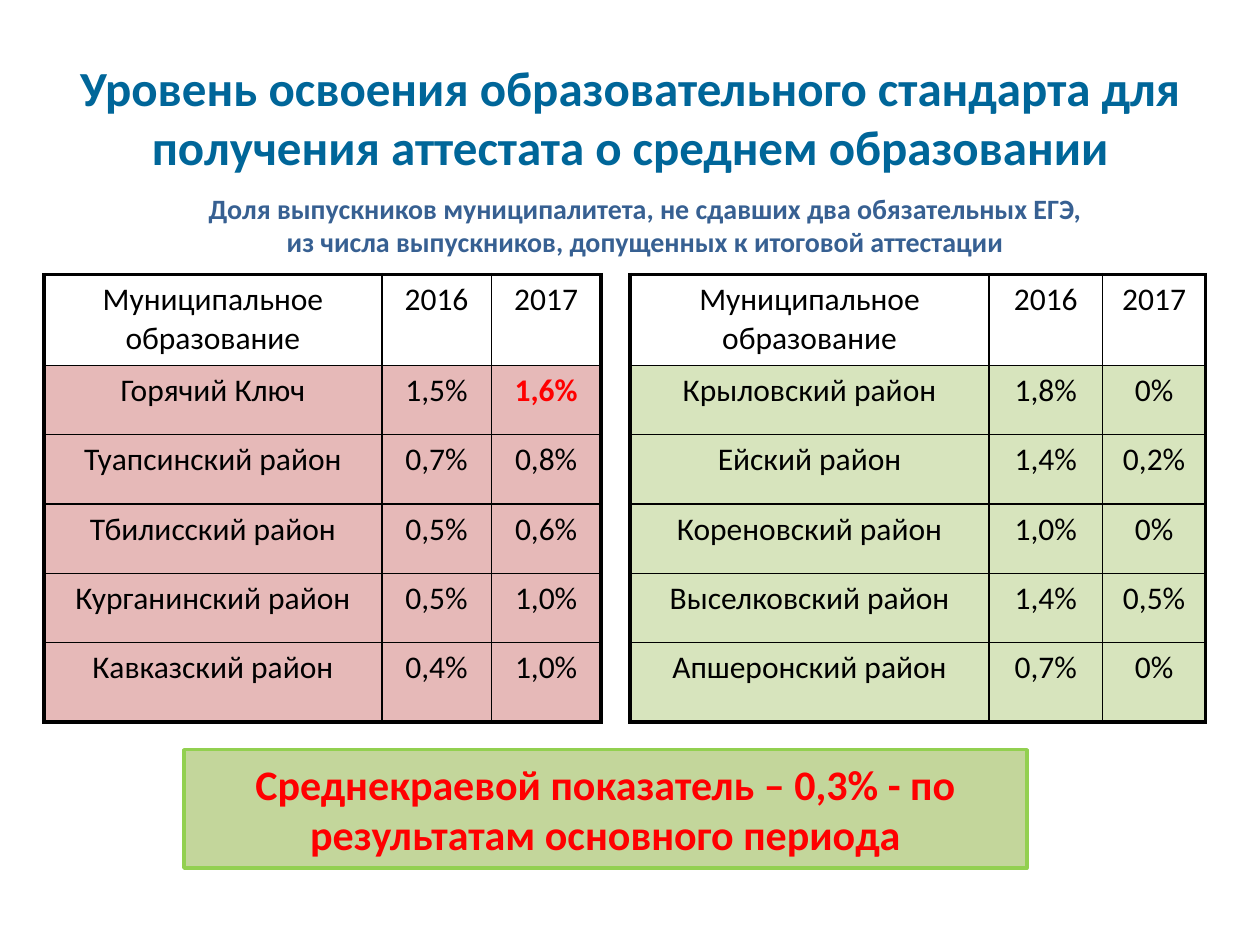
from dataclasses import dataclass

from lxml import etree
from pptx import Presentation
from pptx.dml.color import RGBColor
from pptx.enum.shapes import MSO_SHAPE
from pptx.enum.text import MSO_ANCHOR, PP_ALIGN
from pptx.oxml.ns import qn
from pptx.util import Inches, Pt

CENTER = PP_ALIGN.CENTER
TOP = MSO_ANCHOR.TOP
MIDDLE = MSO_ANCHOR.MIDDLE
RECTANGLE = MSO_SHAPE.RECTANGLE

FONT_NAME = "Calibri"
COLORS = {
    "title": "006699",
    "subtitle": "376092",
    "text": "000000",
    "alert": "FF0000",
    "border": "000000",
    "worse": "E6B9B8",
    "better": "D7E4BD",
    "summary_fill": "C3D69B",
    "summary_line": "92D050",
}
HEADER = ("Муниципальное образование", "2016", "2017")
ROW_HEIGHTS = (0.72, 0.55, 0.55, 0.55, 0.55, 0.63)
TABLE_TOP = 2.18
OUTER_BORDER, INNER_BORDER = 2.25, 1


@dataclass
class Box:
    left: float
    top: float
    width: float
    height: float

    def lengths(self) -> tuple:
        return tuple(Inches(v) for v in (self.left, self.top, self.width, self.height))


@dataclass
class TextStyle:
    size: float
    color: str
    bold: bool = False


@dataclass
class ResultTable:
    left: float
    columns: tuple
    fill: str
    rows: tuple
    alerts: tuple = ()


CELL_STYLE = TextStyle(18, "text")
ALERT_STYLE = TextStyle(18, "alert", True)

TABLES = (
    ResultTable(0.35, (2.68, 0.87, 0.87), "worse", (
        ("Горячий Ключ", "1,5%", "1,6%"),
        ("Туапсинский район", "0,7%", "0,8%"),
        ("Тбилисский район", "0,5%", "0,6%"),
        ("Курганинский район", "0,5%", "1,0%"),
        ("Кавказский район", "0,4%", "1,0%"),
    ), alerts=("1,6%",)),
    ResultTable(5, (2.85, 0.9, 0.82), "better", (
        ("Крыловский район", "1,8%", "0%"),
        ("Ейский район", "1,4%", "0,2%"),
        ("Кореновский район", "1,0%", "0%"),
        ("Выселковский район", "1,4%", "0,5%"),
        ("Апшеронский район", "0,7%", "0%"),
    )),
)


def color(name: str) -> RGBColor:
    return RGBColor.from_string(COLORS[name])


def write_text(frame, lines: tuple, style: TextStyle, anchor=TOP) -> None:
    frame.word_wrap = True
    frame.vertical_anchor = anchor
    font_values = {"name": FONT_NAME, "size": Pt(style.size), "bold": style.bold}
    for index, line in enumerate(lines):
        paragraph = frame.add_paragraph() if index else frame.paragraphs[0]
        paragraph.alignment = CENTER
        run = paragraph.add_run()
        run.text = line
        for name, value in font_values.items():
            setattr(run.font, name, value)
        run.font.color.rgb = color(style.color)


def add_text(slide, box: Box, lines: tuple, style: TextStyle, anchor=TOP) -> None:
    shape = slide.shapes.add_textbox(*box.lengths())
    write_text(shape.text_frame, lines, style, anchor)


def set_borders(cell, widths: dict) -> None:
    properties = cell._tc.get_or_add_tcPr()
    for side, width in widths.items():
        line = etree.SubElement(properties, qn(f"a:ln{side}"), w=str(Pt(width)))
        fill = etree.SubElement(line, qn("a:solidFill"))
        etree.SubElement(fill, qn("a:srgbClr"), val=COLORS["border"])


def add_result_table(slide, data: ResultTable) -> None:
    rows = (HEADER, *data.rows)
    last_row, last_column = len(rows) - 1, len(data.columns) - 1
    box = Box(data.left, TABLE_TOP, sum(data.columns), sum(ROW_HEIGHTS))
    table = slide.shapes.add_table(len(rows), len(data.columns), *box.lengths()).table
    for column, width in zip(table.columns, data.columns):
        column.width = Inches(width)
    for row, height in zip(table.rows, ROW_HEIGHTS):
        row.height = Inches(height)

    for r, values in enumerate(rows):
        for c, value in enumerate(values):
            cell = table.cell(r, c)
            outer_sides = {"L": c == 0, "R": c == last_column,
                           "T": r == 0, "B": r == last_row}
            set_borders(cell, {side: OUTER_BORDER if outer else INNER_BORDER
                               for side, outer in outer_sides.items()})
            if r == 0:
                cell.fill.background()
            else:
                cell.fill.solid()
                cell.fill.fore_color.rgb = color(data.fill)
            style = ALERT_STYLE if value in data.alerts else CELL_STYLE
            write_text(cell.text_frame, (value,), style)


def add_summary(slide, box: Box, text: str) -> None:
    shape = slide.shapes.add_shape(RECTANGLE, *box.lengths())
    shape.shadow.inherit = False
    shape.fill.solid()
    shape.fill.fore_color.rgb = color("summary_fill")
    shape.line.color.rgb = color("summary_line")
    shape.line.width = Pt(2)
    write_text(shape.text_frame, (text,), TextStyle(24, "alert", True), MIDDLE)


def main() -> None:
    presentation = Presentation()
    presentation.slide_width = Inches(10)
    presentation.slide_height = Inches(7.5)
    slide = presentation.slides.add_slide(presentation.slide_layouts[6])

    # Subtitle
    add_text(slide, Box(0.12, 1.47, 10, 0.64), (
        "Доля выпускников муниципалитета, не сдавших два обязательных ЕГЭ,",
        "из числа выпускников, допущенных к итоговой аттестации",
    ), TextStyle(16, "subtitle", True))

    # Tables of districts
    for data in TABLES:
        add_result_table(slide, data)

    # Regional average
    add_summary(slide, Box(1.46, 5.95, 6.69, 0.94),
                "Среднекраевой показатель – 0,3% - по результатам основного периода")

    # Title
    add_text(slide, Box(0.5, 0.3, 9, 1.25), (
        "Уровень освоения образовательного стандарта для "
        "получения аттестата о среднем образовании",
    ), TextStyle(28, "title", True), MIDDLE)

    presentation.save("out.pptx")


if __name__ == "__main__":
    main()
